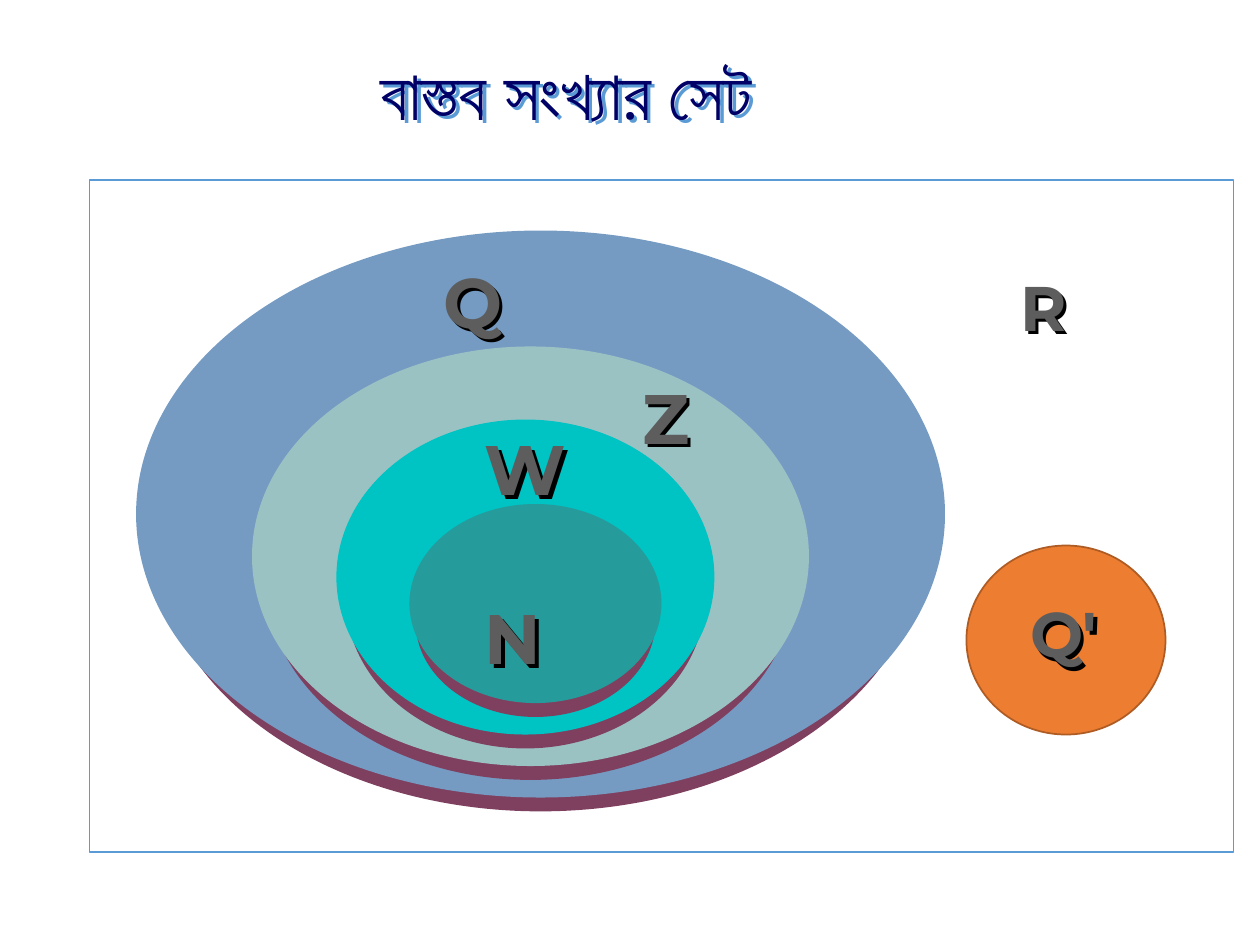
import pptx
import pptx.dml.color
import pptx.enum.shapes
import pptx.enum.text
import pptx.oxml
import pptx.oxml.ns
import pptx.util

Inches = pptx.util.Inches
Kind = pptx.enum.shapes.MSO_SHAPE
Align = pptx.enum.text.PP_ALIGN
Fit = pptx.enum.text.MSO_AUTO_SIZE
Anchor = pptx.enum.text.MSO_ANCHOR


class Theme:
    navy, blue, white = "000066", "5B9BD5", "FFFFFF"
    gray, black = "5D5D5D", "000000"
    side, orange, rust = "7F4060", "ED7D31", "AF5C24"
    sets = ("759BC3", "9BC2C3", "00C3C3", "269B9B")
    head, body = "Calibri", "Montserrat"
    big, small = 40, 36


DEPTH = 0.11  # how far a disc's side shows below its face
TAPER = 0.95  # size of a disc's back against its face


def color(code):
    return pptx.dml.color.RGBColor.from_string(code)


def shape(slide, kind, box, fill, line=None):
    item = slide.shapes.add_shape(kind, *map(Inches, box))
    item.shadow.inherit = False
    item.fill.solid()
    item.fill.fore_color.rgb = color(fill)
    if line:
        item.line.color.rgb = color(line)
        item.line.width = pptx.util.Pt(1)
    else:
        item.line.fill.background()


def disc(slide, box, fill):
    """A flat face over a slightly smaller, lower back."""
    left, top, wide, high = box
    back = (left + wide * (1 - TAPER) / 2,
            top + high * (1 - TAPER) + DEPTH,
            wide * TAPER, high * TAPER)
    shape(slide, Kind.OVAL, back, Theme.side)
    shape(slide, Kind.OVAL, box, fill)


def shade(item, code):
    """Cast a hard shadow down and to the right."""
    space = pptx.oxml.ns.nsdecls("a")
    item.element.spPr.append(pptx.oxml.parse_xml(
        f'<a:effectLst {space}><a:outerShdw dist="{Inches(0.04)}" '
        f'dir="2700000" algn="tl" rotWithShape="0">'
        f'<a:srgbClr val="{code}"/></a:outerShdw></a:effectLst>'))


def label(slide, box, text, look, shadow, frame, para):
    item = slide.shapes.add_textbox(*map(Inches, box))
    body = item.text_frame
    line = body.paragraphs[0]
    run = line.add_run()
    run.text = text
    run.font.color.rgb = color(look.pop("color"))
    for part, form in ((body, frame), (line, para), (run.font, look)):
        for name, value in form.items():
            setattr(part, name, value)
    shade(item, shadow)


def main():
    deck = pptx.Presentation()
    deck.slide_width, deck.slide_height = Inches(10), Inches(7.5)
    slide = deck.slides.add_slide(deck.slide_layouts[6])

    # Title
    label(slide, (0.33, 0.25, 8.33, 1.05), "বাস্তব সংখ্যার সেট",
          {"color": Theme.navy, "name": Theme.head,
           "size": pptx.util.Pt(Theme.big)}, Theme.blue,
          {"word_wrap": True, "vertical_anchor": Anchor.MIDDLE},
          {"alignment": Align.CENTER, "line_spacing": 0.9})

    # Real numbers, with the nested sets inside
    shape(slide, Kind.RECTANGLE, (0.71, 1.43, 9.08, 5.33),
          Theme.white, Theme.blue)
    boxes = ((1.08, 1.83, 6.42, 4.5), (2, 2.75, 4.42, 3.33),
             (2.67, 3.33, 3, 2.5), (3.25, 4, 2, 1.58))
    for box, fill in zip(boxes, Theme.sets):
        disc(slide, box, fill)

    # Irrational numbers
    shape(slide, Kind.OVAL, (7.67, 4.33, 1.58, 1.5),
          Theme.orange, Theme.rust)

    # Set names
    names = (("Q", (3.42, 2, 0.66, 0.77), Theme.big, False),
             ("Z", (5, 2.92, 0.6, 0.77), Theme.big, False),
             ("W", (3.75, 3.33, 0.76, 0.77), Theme.big, False),
             ("N", (3.75, 4.67, 0.66, 0.77), Theme.big, False),
             ("Q'", (8.08, 4.67, 0.83, 0.7), Theme.small, True),
             ("R", (8, 2.08, 0.83, 0.7), Theme.small, True))
    for text, box, size, wrap in names:
        label(slide, box, text,
              {"color": Theme.gray, "name": Theme.body, "bold": True,
               "size": pptx.util.Pt(size)}, Theme.black,
              {"word_wrap": wrap, "auto_size": Fit.SHAPE_TO_FIT_TEXT},
              {"alignment": Align.LEFT})

    deck.save("out.pptx")


if __name__ == "__main__":
    main()
